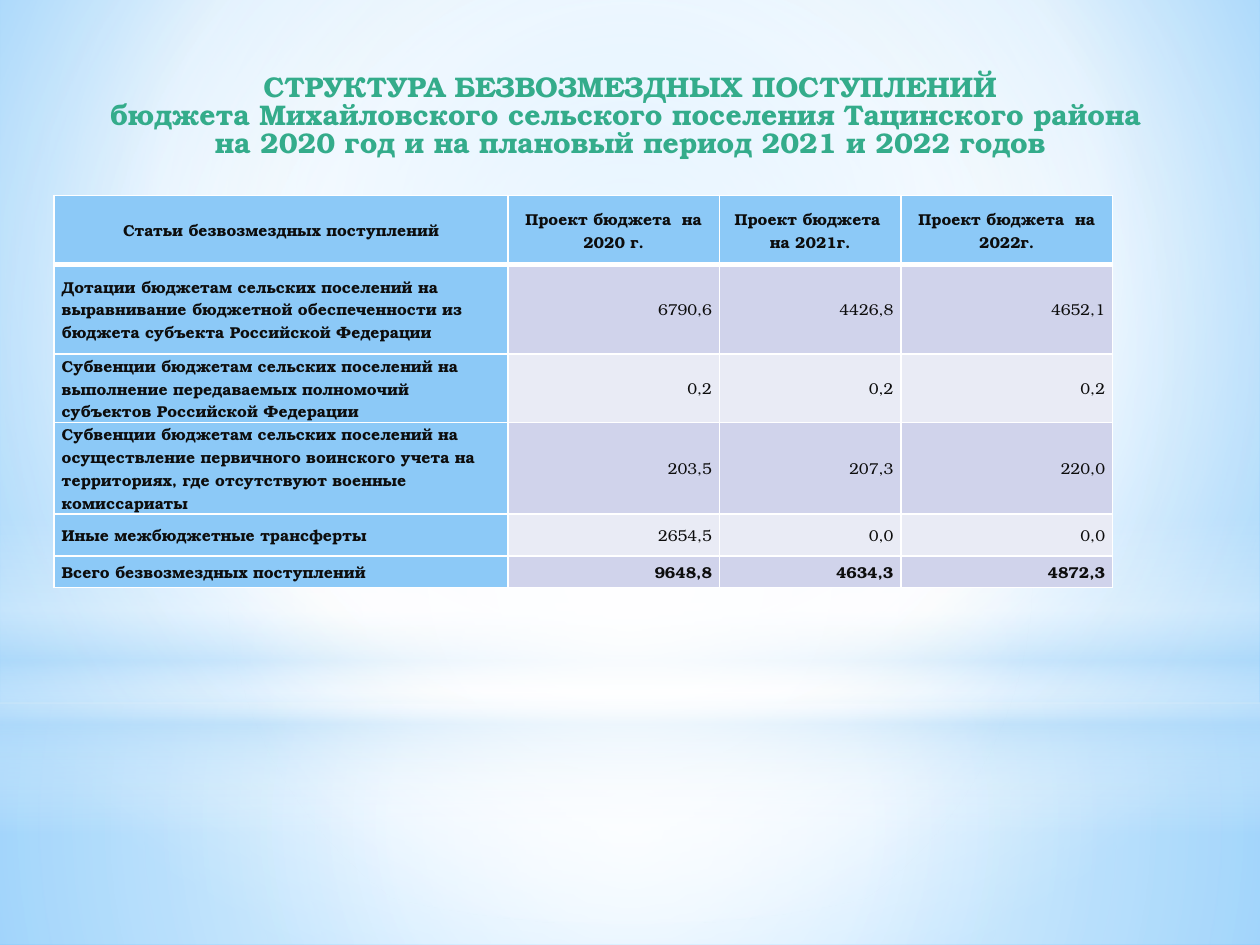
import dataclasses

import lxml.etree
import pptx
import pptx.dml.color
import pptx.enum.shapes
import pptx.enum.text
import pptx.oxml
import pptx.oxml.ns
import pptx.util

ALIGN = pptx.enum.text.PP_ALIGN
SHAPE = pptx.enum.shapes.MSO_SHAPE
MIDDLE = pptx.enum.text.MSO_ANCHOR.MIDDLE


@dataclasses.dataclass(frozen=True)
class Theme:
    """Colours, font and type sizes of the deck."""

    font: str = "TeX Gyre Bonum"
    title_size: float = 16.2
    table_size: float = 9
    title: str = "34AC8B"
    text: str = "0D0D0D"
    white: str = "FFFFFF"
    haze: str = "B4DCFA"
    sky: str = "9ED5FF"
    deep_sky: str = "5BB9FF"
    label: str = "8CC9F7"
    bands: tuple = ("D0D3EB", "E9EBF5")


def write_text(frame, text, *, font, size, color, bold=False, align=ALIGN.LEFT, spacing=1.0):
    """Put one formatted paragraph into a text frame."""
    frame.text = text
    paragraph = frame.paragraphs[0]
    paragraph.alignment = align
    paragraph.line_spacing = spacing
    for run in paragraph.runs:
        run.font.name = font
        run.font.size = pptx.util.Pt(size)
        run.font.bold = bold
        run.font.color.rgb = pptx.dml.color.RGBColor.from_string(color)


def gradient(stops, center=None):
    """Return a gradient fill, circular around center or else running downwards."""
    colors = "".join(
        f'<a:gs pos="{position * 1000}"><a:srgbClr val="{color}">'
        f'<a:alpha val="{opacity * 1000}"/></a:srgbClr></a:gs>'
        for position, color, opacity in stops
    )
    if center:
        left, top, right, bottom = (share * 1000 for share in center)
        direction = (
            f'<a:path path="circle"><a:fillToRect l="{left}" t="{top}" '
            f'r="{right}" b="{bottom}"/></a:path>'
        )
    else:
        direction = '<a:lin ang="5400000" scaled="0"/>'
    return pptx.oxml.parse_xml(
        f'<a:gradFill {pptx.oxml.ns.nsdecls("a")} rotWithShape="1">'
        f"<a:gsLst>{colors}</a:gsLst>{direction}</a:gradFill>"
    )


def replace_gradient(fill, holder, stops, center=None):
    """Swap the default gradient of a fill for one with the given stops."""
    fill.gradient()
    default = holder.find(pptx.oxml.ns.qn("a:gradFill"))
    holder.replace(default, gradient(stops, center))


class SlideBuilder:
    """Holds the theme and current slide on a grid of 100 columns by 75 rows."""

    def __init__(self, presentation, theme):
        """Start a slide with a title placeholder."""
        self.theme = theme
        self.slide = presentation.slides.add_slide(presentation.slide_layouts[5])
        self.column = presentation.slide_width / 100
        self.row = presentation.slide_height / 75

    def place(self, left, top, width, height):
        """Turn grid columns and rows into slide lengths."""
        return (
            round(left * self.column),
            round(top * self.row),
            round(width * self.column),
            round(height * self.row),
        )

    def background(self, stops, center):
        """Fill the slide background with a circular gradient."""
        fill = self.slide.background.fill
        fill.gradient()
        holder = self.slide.element.find(".//" + pptx.oxml.ns.qn("p:bgPr"))
        replace_gradient(fill, holder, stops, center)

    def glow(self, kind, area, stops, center=None):
        """Add a borderless shape with a translucent gradient."""
        shape = self.slide.shapes.add_shape(kind, *self.place(*area))
        shape.shadow.inherit = False
        shape.line.fill.background()
        replace_gradient(shape.fill, shape.element.spPr, stops, center)

    def title(self, text, area):
        """Move the title placeholder to the front and fill it."""
        shape = self.slide.shapes.title
        shape.left, shape.top, shape.width, shape.height = self.place(*area)
        self.slide.shapes.element.append(shape.element)
        frame = shape.text_frame
        frame.word_wrap = True
        frame.auto_size = pptx.enum.text.MSO_AUTO_SIZE.NONE
        frame.vertical_anchor = MIDDLE
        write_text(frame, text, font=self.theme.font, size=self.theme.title_size,
                   color=self.theme.title, bold=True, align=ALIGN.CENTER, spacing=0.83)

    def borders(self, cell, bottom):
        """Draw white cell borders with the given bottom width in points."""
        properties = cell._tc.get_or_add_tcPr()
        for index, (side, width) in enumerate(
            {"lnL": 1, "lnR": 1, "lnT": 1, "lnB": bottom}.items()
        ):
            line = pptx.oxml.parse_xml(
                f'<a:{side} {pptx.oxml.ns.nsdecls("a")} w="{pptx.util.Pt(width)}">'
                f'<a:solidFill><a:srgbClr val="{self.theme.white}"/></a:solidFill></a:{side}>'
            )
            properties.insert(index, line)

    def table(self, records, area, widths, heights):
        """Add a table with a header, a label column, banded values and a total."""
        shape = self.slide.shapes.add_table(len(records), len(widths), *self.place(*area))
        table = shape.table
        for column, width in zip(table.columns, widths):
            column.width = round(width * self.column)
        for row, height in zip(table.rows, heights):
            row.height = round(height * self.row)
        for y, record in enumerate(records):
            header, total = y == 0, y == len(records) - 1
            for x, text in enumerate(record):
                label = x == 0
                cell = table.cell(y, x)
                cell.margin_left = cell.margin_right = pptx.util.Inches(0.06)
                cell.margin_top = cell.margin_bottom = 0
                cell.vertical_anchor = MIDDLE
                color = self.theme.label if header or label else self.theme.bands[(y - 1) % 2]
                cell.fill.solid()
                cell.fill.fore_color.rgb = pptx.dml.color.RGBColor.from_string(color)
                align = ALIGN.CENTER if header else ALIGN.LEFT if label else ALIGN.RIGHT
                write_text(cell.text_frame, text, font=self.theme.font,
                           size=self.theme.table_size, color=self.theme.text,
                           bold=header or label or total, align=align)
                self.borders(cell, bottom=3 if header else 1)


def main():
    """Build and save the budget slide."""
    presentation = pptx.Presentation()
    presentation.slide_width = pptx.util.Inches(10)
    presentation.slide_height = pptx.util.Inches(7.5)
    theme = Theme()
    builder = SlideBuilder(presentation, theme)
    white, haze = theme.white, theme.haze
    center = (50, 50, 50, 50)

    builder.background(
        [(0, theme.sky, 100), (60, white, 100), (100, theme.deep_sky, 100)], (20, 10, 20, 60))
    builder.glow(SHAPE.RECTANGLE, (0, 55.8, 100, 19.2),
                 [(0, white, 91), (37, white, 76), (100, haze, 79)], center)
    builder.glow(SHAPE.RECTANGLE, (0, 0, 100, 55.8),
                 [(0, white, 89), (48, white, 62), (100, haze, 79)], center)
    builder.glow(SHAPE.RECTANGLE, (0, 41.2, 100, 25),
                 [(0, white, 0), (29, white, 30), (45, haze, 40),
                  (55, white, 26), (65, haze, 60), (100, white, 0)])
    builder.glow(SHAPE.OVAL, (0, 17.5, 100, 55.8), [(0, white, 100), (56, white, 0)], center)

    builder.title(
        "СТРУКТУРА БЕЗВОЗМЕЗДНЫХ ПОСТУПЛЕНИЙ\v"
        "бюджета Михайловского сельского поселения Тацинского района \v"
        "на 2020 год и на плановый период 2021 и 2022 годов",
        (5, 3.6, 90, 11.4))
    builder.table(
        [
            ("Статьи безвозмездных поступлений", "Проект бюджета  на 2020 г.",
             "Проект бюджета  на 2021г.", "Проект бюджета  на 2022г."),
            ("Дотации бюджетам сельских поселений на выравнивание бюджетной обеспеченности "
             "из бюджета субъекта Российской Федерации", "6790,6", "4426,8", "4652,1"),
            ("Субвенции бюджетам сельских поселений на выполнение передаваемых полномочий "
             "субъектов Российской Федерации", "0,2", "0,2", "0,2"),
            ("Субвенции бюджетам сельских поселений на осуществление первичного воинского "
             "учета на территориях, где отсутствуют военные комиссариаты",
             "203,5", "207,3", "220,0"),
            ("Иные межбюджетные трансферты", "2654,5", "0,0", "0,0"),
            ("Всего безвозмездных поступлений", "9648,8", "4634,3", "4872,3"),
        ],
        (4.3, 15.5, 84, 28.9),
        widths=(36, 16.8, 14.4, 16.8),
        heights=(5.5, 7.1, 2.6, 3.3, 3.3, 2.5))
    presentation.save("out.pptx")


if __name__ == "__main__":
    main()
